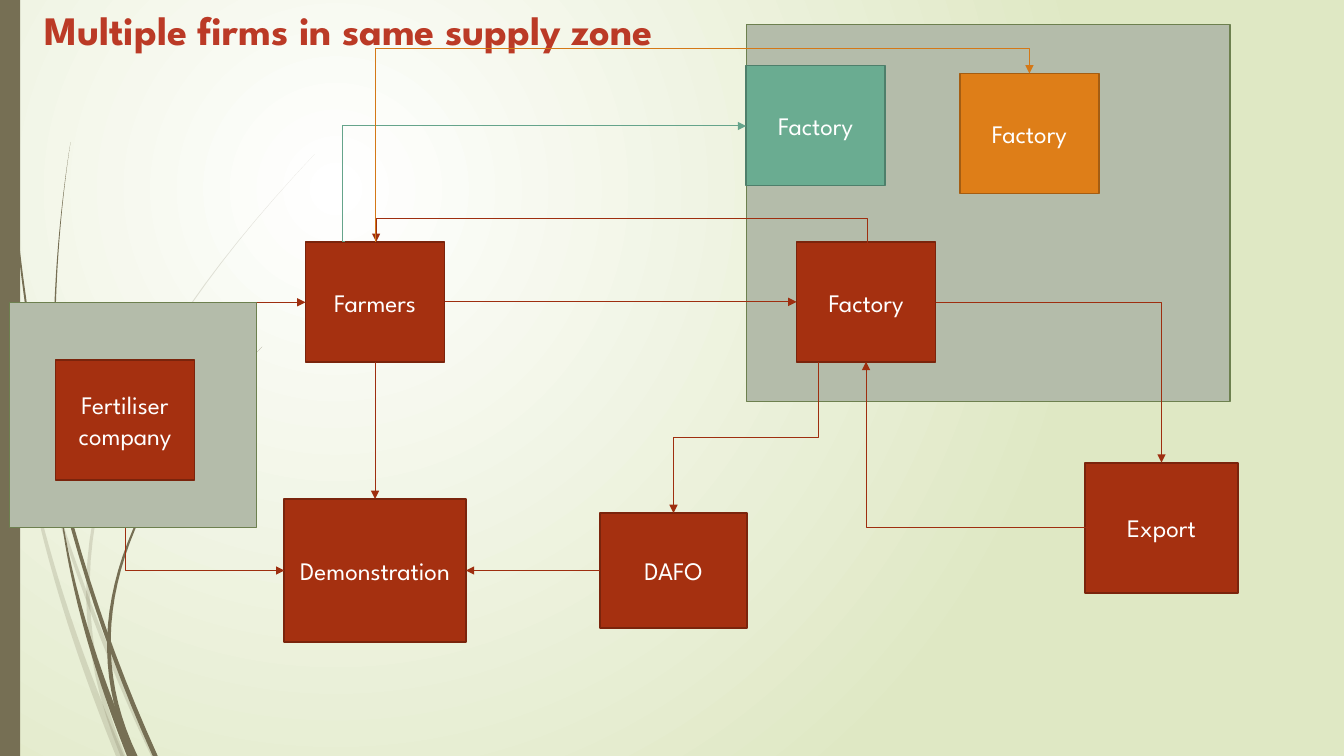
from lxml import etree
from pptx import Presentation
from pptx.dml.color import RGBColor
from pptx.enum import shapes, text
from pptx.oxml import ns
from pptx.util import Inches, Pt

FONT = "League Spartan"
WHITE = RGBColor(0xFF, 0xFF, 0xFF)
PALE_GREEN = RGBColor(0xDF, 0xE8, 0xC4)
OLIVE = RGBColor(0x76, 0x6F, 0x54)
TITLE_RED = RGBColor(0xBB, 0x3A, 0x26)
RED, RED_EDGE, RED_LINE = RGBColor(0xA5, 0x30, 0x10), RGBColor(0x7A, 0x24, 0x0C), RGBColor(0x9E, 0x2E, 0x0F)
TEAL, TEAL_EDGE, TEAL_LINE = RGBColor(0x6A, 0xAC, 0x91), RGBColor(0x4E, 0x7F, 0x6B), RGBColor(0x65, 0xA4, 0x8B)
ORANGE, ORANGE_EDGE, ORANGE_LINE = RGBColor(0xDE, 0x7E, 0x18), RGBColor(0xA4, 0x5D, 0x12), RGBColor(0xD4, 0x78, 0x17)
ZONE, ZONE_EDGE = RGBColor(0xB4, 0xBC, 0xAA), RGBColor(0x6D, 0x80, 0x4F)
TOP, LEFT, BOTTOM, RIGHT = range(4)
BOX_W, BOX_H = 1.38, 1.19
BLADE_STEPS = 30


def write(sp, words, size=18, color=WHITE, bold=False, align=text.PP_ALIGN.CENTER, anchor=text.MSO_ANCHOR.MIDDLE):
    tf = sp.text_frame
    tf.word_wrap = True
    tf.vertical_anchor = anchor
    p = tf.paragraphs[0]
    p.alignment = align
    r = p.add_run()
    r.text = words
    r.font.name = FONT
    r.font.size = Pt(size)
    r.font.bold = bold
    r.font.color.rgb = color


def add_box(x, y, w, h, fill, edge=None, weight=1.25):
    sp = s.shapes.add_shape(shapes.MSO_SHAPE.RECTANGLE, Inches(x), Inches(y), Inches(w), Inches(h))
    sp.shadow.inherit = False
    sp.fill.solid()
    sp.fill.fore_color.rgb = fill
    if edge is None:
        sp.line.fill.background()
    else:
        sp.line.color.rgb = edge
        sp.line.width = Pt(weight)
    return sp


prs = Presentation()
prs.slide_width = Inches(13.33)
prs.slide_height = Inches(7.5)
s = prs.slides.add_slide(prs.slide_layouts[6])

bg = s.background.fill
bg.gradient()
for stop, color in zip(bg.gradient_stops, (WHITE, PALE_GREEN)):
    stop.color.rgb = color
lin = s.element.xpath(".//p:bgPr/a:gradFill/a:lin")[0]
glow = etree.Element(ns.qn("a:path"), path="circle")
etree.SubElement(glow, ns.qn("a:fillToRect"), l="50000", t="50000", r="100000", b="100000")
lin.getparent().replace(lin, glow)

for tip, upper_pull, lower_pull, root, root_width, opacity in [
    ((0, 2.9), (0.3, 4.4), (0.85, 6.1), (1.53, 7.5), 0.06, 20),
    ((0.11, 3.5), (0.25, 4.9), (0.65, 6.2), (1.19, 7.5), 0.08, 20),
    ((3.12, 1.53), (1.03, 3.75), (0.4, 5.5), (1.22, 7.5), 0.05, 20),
    ((0.04, 0), (0.07, 2.5), (0.41, 5), (1.54, 7.5), 0.05, 100),
    ((0.57, 4.77), (0.65, 5.7), (0.95, 6.65), (1.3, 7.5), 0.08, 100),
    ((2.6, 3.44), (1.24, 4.88), (0.72, 6.2), (1.34, 7.5), 0.05, 100),
    ((0.7, 1.41), (0.53, 2.5), (0.49, 3.7), (0.6, 4.72), 0.03, 100),
]:
    left_edge, right_edge = [], []
    for step in range(BLADE_STEPS + 1):
        t = step / BLADE_STEPS
        weights = ((1 - t) ** 3, 3 * t * (1 - t) ** 2, 3 * t ** 2 * (1 - t), t ** 3)
        x, y = (sum(k * v for k, v in zip(weights, axis)) for axis in zip(tip, upper_pull, lower_pull, root))
        half = root_width * t / 2
        left_edge.append((Inches(x - half), Inches(y)))
        right_edge.append((Inches(x + half), Inches(y)))
    fb = s.shapes.build_freeform(*left_edge[0])
    fb.add_line_segments(left_edge[1:] + right_edge[::-1], close=True)
    blade = fb.convert_to_shape()
    blade.shadow.inherit = False
    blade.line.fill.background()
    blade.fill.solid()
    blade.fill.fore_color.rgb = OLIVE
    clr = blade.element.xpath("./p:spPr/a:solidFill/a:srgbClr")[0]
    etree.SubElement(clr, ns.qn("a:alpha"), val=str(opacity * 1000))

add_box(0, 0, 0.2, 7.5, OLIVE)
title = s.shapes.add_textbox(Inches(0.34), Inches(0), Inches(12.69), Inches(0.51))
write(title, "Multiple firms in same supply zone", size=28.8, color=TITLE_RED, bold=True,
      align=text.PP_ALIGN.LEFT, anchor=text.MSO_ANCHOR.TOP)

add_box(7.4, 0.24, 4.8, 3.74, ZONE, ZONE_EDGE, 0.75)
boxes = {}
for name, words, x, y, w, h, fill, edge in [
    ("farmers", "Farmers", 3.03, 2.4, BOX_W, BOX_H, RED, RED_EDGE),
    ("factory", "Factory", 7.9, 2.4, BOX_W, BOX_H, RED, RED_EDGE),
    ("demonstration", "Demonstration", 2.82, 4.95, 1.8, 1.42, RED, RED_EDGE),
    ("export", "Export", 10.76, 4.59, 1.52, 1.29, RED, RED_EDGE),
    ("dafo", "DAFO", 5.95, 5.09, 1.46, 1.14, RED, RED_EDGE),
    ("teal factory", "Factory", 7.4, 0.65, BOX_W, BOX_H, TEAL, TEAL_EDGE),
    ("orange factory", "Factory", 9.52, 0.73, BOX_W, BOX_H, ORANGE, ORANGE_EDGE),
]:
    boxes[name] = add_box(x, y, w, h, fill, edge)
    write(boxes[name], words)

arrows = []
for start, start_side, end, end_side in [
    ("farmers", RIGHT, "factory", LEFT),
    ("farmers", BOTTOM, "demonstration", TOP),
    ("dafo", LEFT, "demonstration", RIGHT),
]:
    cn = s.shapes.add_connector(shapes.MSO_CONNECTOR.STRAIGHT, 0, 0, 0, 0)
    cn.begin_connect(boxes[start], start_side)
    cn.end_connect(boxes[end], end_side)
    arrows.append((cn, RED_LINE))

for (x1, y1), (x2, y2), leaves_vertically, lane, color in [
    ((8.6, 2.41), (3.73, 2.4), True, 2.16, RED_LINE),
    ((9.28, 3), (11.52, 4.59), False, None, RED_LINE),
    ((10.77, 5.23), (8.59, 3.59), False, None, RED_LINE),
    ((8.12, 3.59), (6.68, 5.09), True, 4.34, RED_LINE),
    ((1.24, 4.76), (2.82, 5.66), True, None, RED_LINE),
    ((1.24, 3.57), (3.03, 3), True, None, RED_LINE),
    ((3.42, 2.4), (7.4, 1.25), False, 3.4, TEAL_LINE),
    ((3.72, 2.4), (10.21, 0.73), True, 0.48, ORANGE_LINE),
]:
    dx, dy = x2 - x1, y2 - y1
    if leaves_vertically:
        w, h = abs(dy), abs(dx)
        turn = 270 if dx * dy > 0 else 90
        flip_h = (dy > 0) == (turn == 270)
        flip_v = (dx < 0) == (turn == 270)
        lane_start, lane_span = y1, dy
    else:
        w, h, turn, flip_h, flip_v = abs(dx), abs(dy), 0, dx < 0, dy < 0
        lane_start, lane_span = x1, dx
    left, top = (x1 + x2 - w) / 2, (y1 + y2 - h) / 2
    cn = s.shapes.add_connector(shapes.MSO_CONNECTOR.ELBOW, Inches(left), Inches(top), Inches(left + w), Inches(top + h))
    xfrm = cn.element.spPr.find(ns.qn("a:xfrm"))
    xfrm.set("rot", str(turn * 60000))
    xfrm.set("flipH", str(int(flip_h)))
    xfrm.set("flipV", str(int(flip_v)))
    geom = cn.element.spPr.find(ns.qn("a:prstGeom"))
    if lane is None:
        geom.set("prst", "bentConnector2")
    else:
        share = round((lane - lane_start) / lane_span * 100000)
        etree.SubElement(geom.find(ns.qn("a:avLst")), ns.qn("a:gd"), name="adj1", fmla=f"val {share}")
    arrows.append((cn, color))

for cn, color in arrows:
    cn.line.color.rgb = color
    cn.line.width = Pt(0.75)
    etree.SubElement(cn.element.spPr.find(ns.qn("a:ln")), ns.qn("a:tailEnd"), type="triangle")
    etree.SubElement(cn.element.spPr, ns.qn("a:effectLst"))

add_box(0.09, 3, 2.45, 2.23, ZONE, ZONE_EDGE, 0.75)
write(add_box(0.55, 3.57, BOX_W, BOX_H, RED, RED_EDGE), "Fertiliser company")

prs.save("out.pptx")
